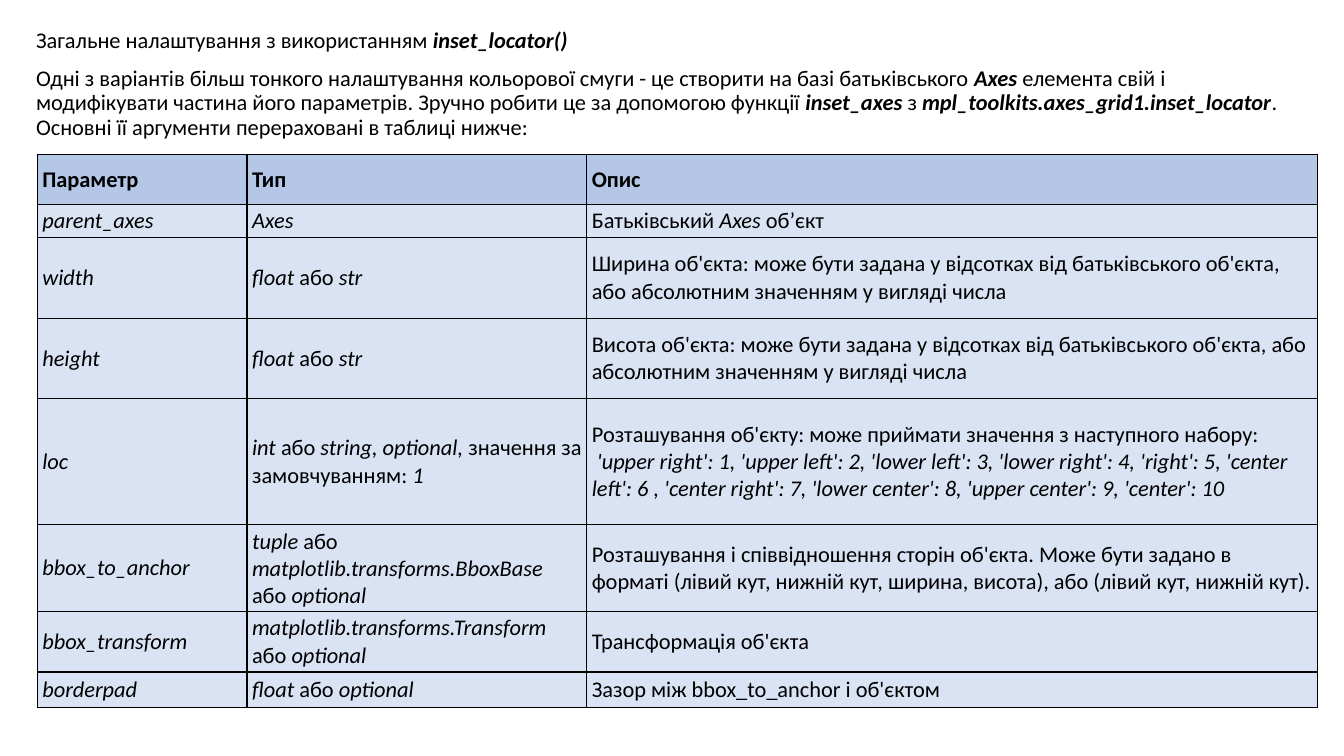
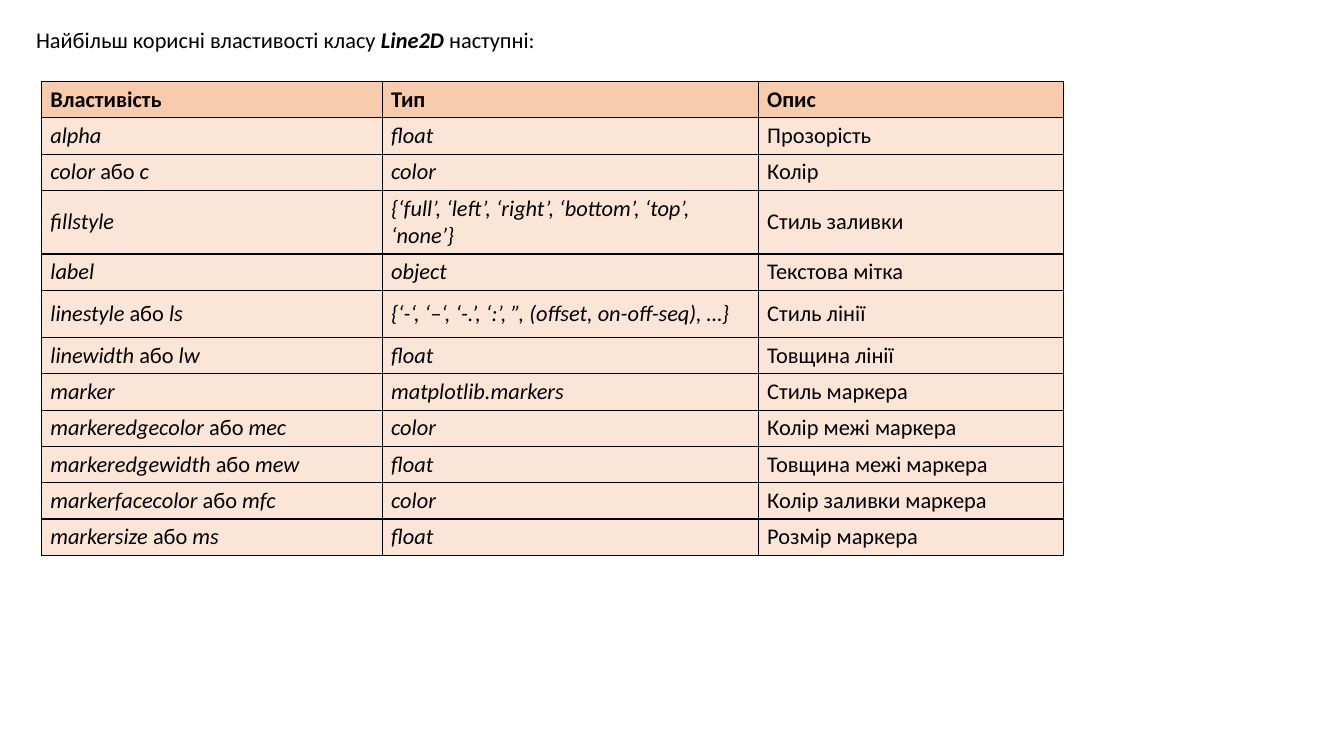
from pptx import Presentation
from pptx.dml.color import RGBColor
from pptx.enum.text import MSO_ANCHOR
from pptx.oxml import parse_xml
from pptx.oxml.ns import nsdecls
from pptx.util import Inches, Pt

FONT, SIZE, INK = "Calibri", 16, "000000"
WIDE, HIGH = 13.33, 7.5
LEFT, TOP, SPAN = 0.26, 0.24, 12.7

# Text between asterisks is emphasised.
SLIDES = [
    {
        "intro": [
            "Загальне налаштування з використанням *inset_locator()*",
            "Одні з варіантів більш тонкого налаштування кольорової смуги - "
            "це створити на базі батьківського *Axes *елемента свій і "
            "модифікувати частина його параметрів. Зручно робити це за "
            "допомогою функції *inset_axes *з "
            "*mpl_toolkits.axes_grid1.inset_locator*. "
            "Основні її аргументи перераховані в таблиці нижче:",
        ],
        "at": (0.37, 1.53),
        "cols": (2.08, 3.37, 7.25),
        "inset": (0.05, 0.03),
        "fills": ("B4C7E7", "DAE3F3"),
        "head": ("Параметр", "Тип", "Опис"),
        "head_high": 0.5,
        "rows": [
            (0.32, "*parent_axes*", "*Axes*", "Батьківський *Axes *об’єкт"),
            (0.8, "*width*", "*float *або *str*",
             "Ширина об'єкта: може бути задана у відсотках від батьківського "
             "об'єкта, або абсолютним значенням у вигляді числа"),
            (0.8, "*height*", "*float *або *str*",
             "Висота об'єкта: може бути задана у відсотках від батьківського "
             "об'єкта, або абсолютним значенням у вигляді числа"),
            (1.25, "*loc*",
             "*int *або *string, optional, *значення за замовчуванням: *1*",
             "Розташування об'єкту: може приймати значення з наступного "
             "набору:\n* 'upper right': 1, 'upper left': 2, 'lower left': 3, "
             "'lower right': 4, 'right': 5, 'center left': 6 , "
             "'center right': 7, 'lower center': 8, 'upper center': 9, "
             "'center': 10*"),
            (0.86, "*bbox_to_anchor*",
             "*tuple *або *matplotlib.transforms.BboxBase *або *optional*",
             "Розташування і співвідношення сторін об'єкта. Може бути задано "
             "в форматі (лівий кут, нижній кут, ширина, висота), або "
             "(лівий кут, нижній кут)."),
            (0.6, "*bbox_transform*",
             "*matplotlib.transforms.Transform *або *optional*",
             "Трансформація об'єкта"),
            (0.35, "*borderpad*", "*float *або *optional*",
             "Зазор між bbox_to_anchor і об'єктом"),
        ],
    },
    {
        "intro": ["Найбільш корисні властивості класу *Line2D* наступні:"],
        "at": (0.41, 0.81),
        "cols": (3.38, 3.73, 3.03),
        "inset": (0.09, 0.04),
        "fills": ("F8CBAD", "FBE5D6"),
        "head": ("Властивість", "Тип", "Опис"),
        "head_high": 0.36,
        "rows": [
            (0.36, "*alpha*", "*float*", "Прозорість"),
            (0.36, "*color *або *c*", "*color*", "Колір"),
            (0.63, "*fillstyle*",
             "*{‘full’, ‘left’, ‘right’, ‘bottom’, ‘top’, ‘none’}*",
             "Стиль заливки"),
            (0.36, "*label*", "*object*", "Текстова мітка"),
            (0.47, "*linestyle *або *ls*",
             "*{‘-‘, ‘–‘, ‘-.’, ‘:’, ”, (offset, on-off-seq), …}*",
             "Стиль лінії"),
            (0.36, "*linewidth *або *lw*", "*float*", "Товщина лінії"),
            (0.36, "*marker*", "*matplotlib.markers*", "Стиль маркера"),
            (0.36, "*markeredgecolor *або *mec*", "*color*",
             "Колір межі маркера"),
            (0.36, "*markeredgewidth *або *mew*", "*float*",
             "Товщина межі маркера"),
            (0.36, "*markerfacecolor *або *mfc*", "*color*",
             "Колір заливки маркера"),
            (0.36, "*markersize *або *ms*", "*float*", "Розмір маркера"),
        ],
    },
]


def paint(target, color):
    """Give a fill or a font a solid colour."""
    if hasattr(target, "solid"):
        target.solid()
        target = target.fore_color
    else:
        target = target.color
    target.rgb = RGBColor.from_string(color)


def write(frame, lines, bold=False, strong=False):
    """Fill a frame; strong makes emphasis bold as well as italic."""
    for num, line in enumerate(lines):
        para = frame.paragraphs[0] if num == 0 else frame.add_paragraph()
        for part, text in enumerate(line.split("*")):
            if not text:
                continue
            run = para.add_run()
            run.text = text
            font = run.font
            font.name, font.size = FONT, Pt(SIZE)
            font.italic = part % 2 == 1
            font.bold = bold or (strong and font.italic)
            paint(font, INK)


def border(cell):
    props = cell._tc.get_or_add_tcPr()
    for side in "LRTB":
        props.append(parse_xml(
            f'<a:ln{side} {nsdecls("a")} w="{Pt(1)}"><a:solidFill>'
            f'<a:srgbClr val="{INK}"/></a:solidFill></a:ln{side}>'))


def add_intro(slide, lines, base):
    """Place the opening text between the top margin and the table."""
    box = slide.shapes.add_textbox(
        *map(Inches, (LEFT, TOP, SPAN, base - TOP)))
    frame = box.text_frame
    frame.word_wrap = True
    write(frame, lines, strong=True)
    for num, para in enumerate(frame.paragraphs):
        para.line_spacing = 0.9
        if num:
            para.space_before = Pt(10)


def add_grid(slide, data):
    rows = [(data["head_high"], *data["head"]), *data["rows"]]
    cols = data["cols"]
    size = sum(cols), sum(row[0] for row in rows)
    table = slide.shapes.add_table(
        len(rows), len(cols), *map(Inches, data["at"] + size)).table
    table.horz_banding = False
    for col, width in zip(table.columns, cols):
        col.width = Inches(width)
    side, edge = map(Inches, data["inset"])
    for num, (high, *texts) in enumerate(rows):
        table.rows[num].height = Inches(high)
        for col, text in enumerate(texts):
            cell = table.cell(num, col)
            cell.margin_left = cell.margin_right = side
            cell.margin_top = cell.margin_bottom = edge
            cell.vertical_anchor = MSO_ANCHOR.MIDDLE
            border(cell)
            paint(cell.fill, data["fills"][num > 0])
            write(cell.text_frame, text.split("\n"), bold=num == 0)


def main():
    deck = Presentation()
    deck.slide_width, deck.slide_height = Inches(WIDE), Inches(HIGH)
    for data in SLIDES:
        slide = deck.slides.add_slide(deck.slide_layouts[6])
        add_intro(slide, data["intro"], data["at"][1])
        add_grid(slide, data)
    deck.save("out.pptx")


if __name__ == "__main__":
    main()
